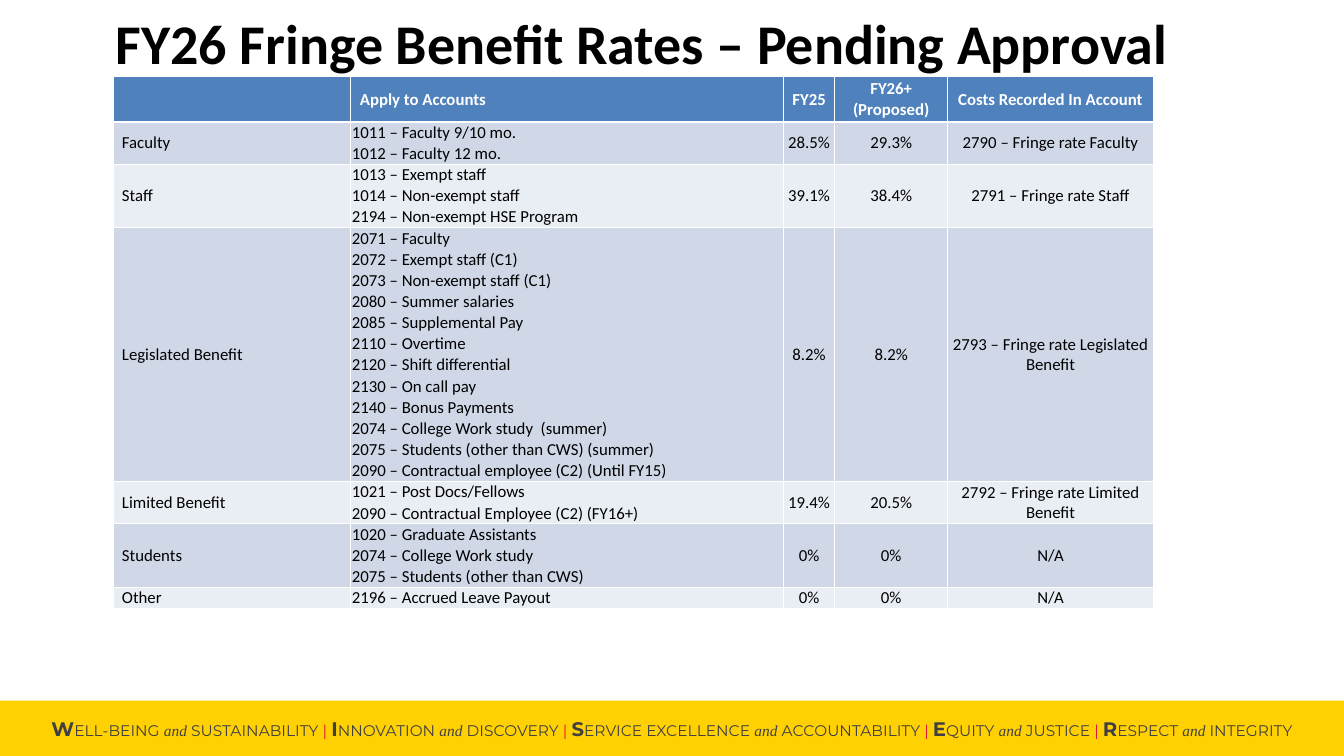
from dataclasses import dataclass

from lxml.etree import SubElement
from pptx import Presentation
from pptx.dml.color import RGBColor
from pptx.enum.shapes import MSO_SHAPE as Shape
from pptx.enum.text import MSO_ANCHOR as Anchor, PP_ALIGN as Align
from pptx.oxml.ns import qn
from pptx.slide import Slide
from pptx.table import Table, _Cell as Cell
from pptx.text.text import _Paragraph as Paragraph
from pptx.util import Pt

PX = 9144
BLACK = RGBColor(0x00, 0x00, 0x00)
WHITE = RGBColor(0xFF, 0xFF, 0xFF)
BLUE = RGBColor(0x4F, 0x81, 0xBD)
BAND_DARK = RGBColor(0xD0, 0xD8, 0xE8)
BAND_LIGHT = RGBColor(0xE9, 0xED, 0xF4)
GOLD = RGBColor(0xFF, 0xD1, 0x02)
CHARCOAL = RGBColor(0x40, 0x40, 0x42)
RED = RGBColor(0xE3, 0x19, 0x37)

HEADERS = ["", "Apply to Accounts", "FY25", "FY26+ (Proposed)", "Costs Recorded In Account"]
COLUMN_WIDTHS = [236, 429, 51, 112, 204]
HEADER_HEIGHT, ROW_HEIGHT = 45, 21


@dataclass(frozen=True)
class Font:
    """Look of one text run."""
    name: str
    size: int
    color: RGBColor
    bold: bool = False
    italic: bool = False


@dataclass(frozen=True)
class RateGroup:
    """Employee group with its accounts and fringe rates."""
    name: str
    accounts: list[str]
    current: str
    proposed: str
    recorded_in: str


@dataclass(frozen=True)
class ValuePair:
    """Two paired values in the footer."""
    first: str
    second: str


TITLE = Font("Calibri", 40, BLACK, bold=True)
HEADER = Font("Calibri", 12, WHITE, bold=True)
BODY = Font("Calibri", 12, BLACK)
INITIAL = Font("Montserrat", 14, CHARCOAL, bold=True)
VALUE = Font("Montserrat", 11, CHARCOAL)
JOINER = Font("Times New Roman", 11, CHARCOAL, italic=True)
DIVIDER = Font("Montserrat", 11, RED)

GROUPS = [
    RateGroup("Faculty", ["1011 – Faculty 9/10 mo.", "1012 – Faculty 12 mo."],
              "28.5%", "29.3%", "2790 – Fringe rate Faculty"),
    RateGroup("Staff", ["1013 – Exempt staff", "1014 – Non-exempt staff",
                        "2194 – Non-exempt HSE Program"],
              "39.1%", "38.4%", "2791 – Fringe rate Staff"),
    RateGroup("Legislated Benefit",
              ["2071 – Faculty", "2072 – Exempt staff (C1)", "2073 – Non-exempt staff (C1)",
               "2080 – Summer salaries", "2085 – Supplemental Pay", "2110 – Overtime",
               "2120 – Shift differential", "2130 – On call pay", "2140 – Bonus Payments",
               "2074 – College Work study  (summer)",
               "2075 – Students (other than CWS) (summer)",
               "2090 – Contractual employee (C2) (Until FY15)"],
              "8.2%", "8.2%", "2793 – Fringe rate Legislated Benefit"),
    RateGroup("Limited Benefit", ["1021 – Post Docs/Fellows",
                                  "2090 – Contractual Employee (C2) (FY16+)"],
              "19.4%", "20.5%", "2792 – Fringe rate Limited Benefit"),
    RateGroup("Students", ["1020 – Graduate Assistants", "2074 – College Work study",
                           "2075 – Students (other than CWS)"], "0%", "0%", "N/A"),
    RateGroup("Other", ["2196 – Accrued Leave Payout"], "0%", "0%", "N/A"),
]
VALUES = [
    ValuePair("WELL-BEING", "SUSTAINABILITY"),
    ValuePair("INNOVATION", "DISCOVERY"),
    ValuePair("SERVICE EXCELLENCE", "ACCOUNTABILITY"),
    ValuePair("EQUITY", "JUSTICE"),
    ValuePair("RESPECT", "INTEGRITY"),
]


def add_span(para: Paragraph, text: str, font: Font) -> None:
    """Append one formatted run."""
    span = para.add_run()
    span.text = text
    span.font.name = font.name
    span.font.size = Pt(font.size)
    span.font.color.rgb = font.color
    span.font.bold = font.bold
    span.font.italic = font.italic


def add_footer(page: Slide) -> None:
    """Draw the gold bar with the value pairs."""
    bar = page.shapes.add_shape(Shape.RECTANGLE, 0, 695 * PX, 1333 * PX, 55 * PX)
    bar.shadow.inherit = False
    bar.fill.solid()
    bar.fill.fore_color.rgb = GOLD
    bar.line.fill.background()
    bar.text_frame.vertical_anchor = Anchor.MIDDLE
    para = bar.text_frame.paragraphs[0]
    para.alignment = Align.CENTER
    for index, pair in enumerate(VALUES):
        if index:
            add_span(para, " | ", DIVIDER)
        add_span(para, pair.first[0], INITIAL)
        add_span(para, f"{pair.first[1:]} ", VALUE)
        add_span(para, "and", JOINER)
        add_span(para, f" {pair.second}", VALUE)


def add_title(page: Slide) -> None:
    """Write the slide title."""
    box = page.shapes.add_textbox(101 * PX, 11 * PX, 1071 * PX, 66 * PX)
    box.text_frame.word_wrap = True
    para = box.text_frame.paragraphs[0]
    para.alignment = Align.CENTER
    para.line_spacing = 0.9
    add_span(para, "FY26 Fringe Benefit Rates – Pending Approval", TITLE)


def set_borders(cell: Cell, top: float, bottom: float) -> None:
    """Outline a cell in white; a zero width hides that edge."""
    properties = cell._tc.get_or_add_tcPr()
    for edge, width in (("L", 1), ("R", 1), ("T", top), ("B", bottom)):
        line = SubElement(properties, qn(f"a:ln{edge}"), w=str(Pt(width)))
        if width:
            fill = SubElement(line, qn("a:solidFill"))
            SubElement(fill, qn("a:srgbClr"), val=str(WHITE))
        else:
            SubElement(line, qn("a:noFill"))


def style_cell(cell: Cell, color: RGBColor, top: float, bottom: float) -> None:
    """Set borders, fill, margins and anchor."""
    set_borders(cell, top, bottom)
    cell.fill.solid()
    cell.fill.fore_color.rgb = color
    cell.margin_left = cell.margin_right = PX
    cell.margin_top = cell.margin_bottom = 0
    cell.vertical_anchor = Anchor.MIDDLE


def write_cell(cell: Cell, text: str, column: int, font: Font) -> None:
    """Write a cell's text, aligned by its column."""
    para = cell.text_frame.paragraphs[0]
    para.alignment = Align.CENTER if column > 1 else Align.LEFT
    if column == 0 or (column == 1 and font == HEADER):
        cell.margin_left = 9 * PX
    if text:
        add_span(para, text, font)


def fill_group(table: Table, group: RateGroup, start: int, color: RGBColor) -> None:
    """Fill the rows of one group and merge its shared cells."""
    last = start + len(group.accounts) - 1
    first_edge = 1.5 if start == 1 else 1
    for row, account in enumerate(group.accounts, start):
        for column in range(len(HEADERS)):
            top = first_edge if row == start else 0
            style_cell(table.cell(row, column), color, top, 1 if row == last else 0)
        write_cell(table.cell(row, 1), account, 1, BODY)
    shared = {0: group.name, 2: group.current, 3: group.proposed, 4: group.recorded_in}
    for column, text in shared.items():
        cell = table.cell(start, column)
        if last > start:
            cell.merge(table.cell(last, column))
        write_cell(cell, text, column, BODY)


def add_rates(page: Slide) -> None:
    """Draw the fringe rate table."""
    count = sum(len(group.accounts) for group in GROUPS)
    height = HEADER_HEIGHT + count * ROW_HEIGHT
    table = page.shapes.add_table(count + 1, len(HEADERS), 112 * PX, 76 * PX,
                                  sum(COLUMN_WIDTHS) * PX, height * PX).table
    table.horz_banding = False
    for column, width in zip(table.columns, COLUMN_WIDTHS):
        column.width = width * PX
    for index, row in enumerate(table.rows):
        row.height = (ROW_HEIGHT if index else HEADER_HEIGHT) * PX
    for column, text in enumerate(HEADERS):
        style_cell(table.cell(0, column), BLUE, 1, 1.5)
        write_cell(table.cell(0, column), text, column, HEADER)
    start = 1
    for index, group in enumerate(GROUPS):
        fill_group(table, group, start, BAND_LIGHT if index % 2 else BAND_DARK)
        start += len(group.accounts)


def main() -> None:
    """Build and save the deck."""
    deck = Presentation()
    deck.slide_width, deck.slide_height = 1333 * PX, 750 * PX
    page = deck.slides.add_slide(deck.slide_layouts[6])
    add_footer(page)
    add_title(page)
    add_rates(page)
    deck.save("out.pptx")


if __name__ == "__main__":
    main()
